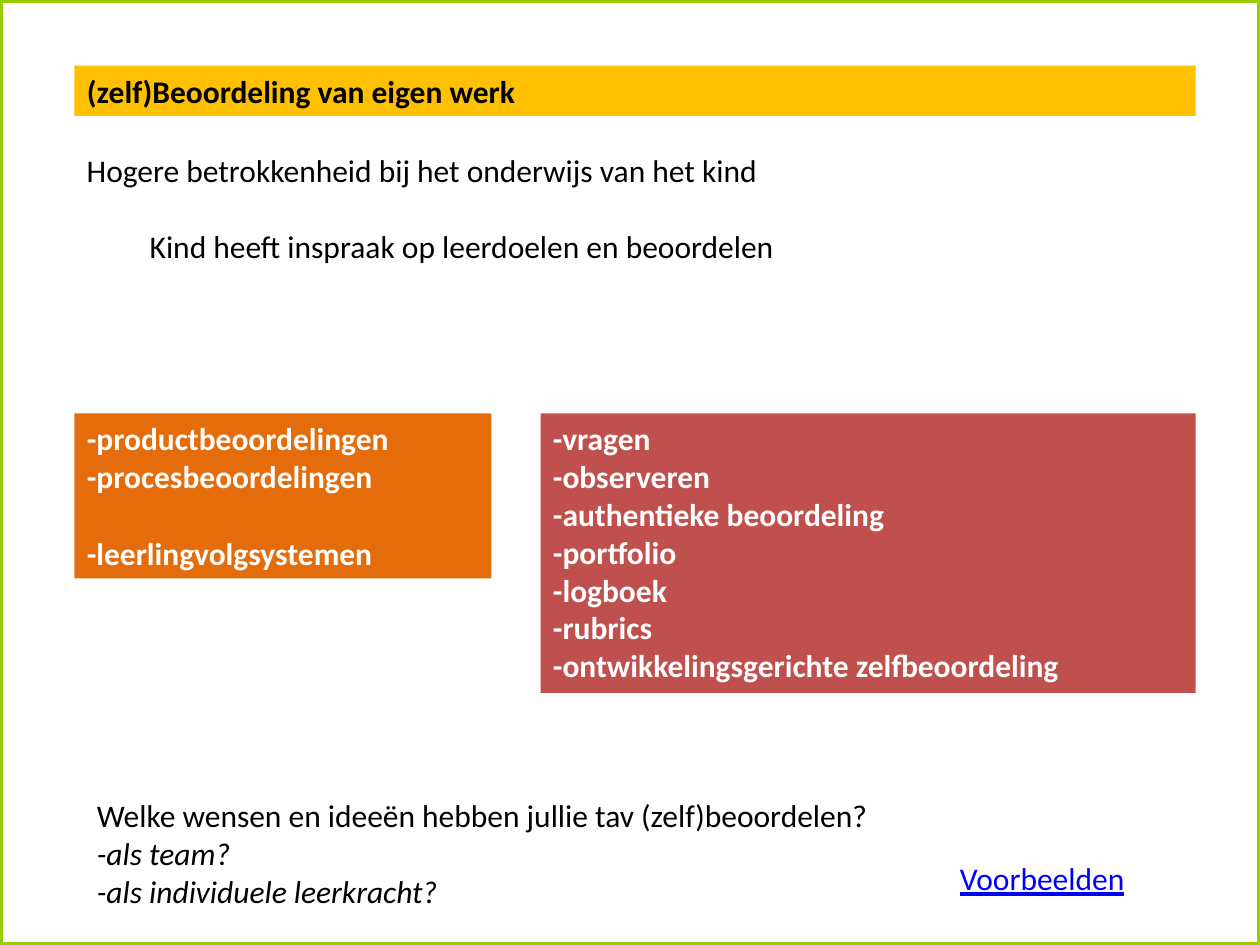
import pptx
import pptx.util
import pptx.dml.color
import pptx.enum.shapes
import pptx.enum.text
from dataclasses import dataclass

Inches = pptx.util.Inches
Pt = pptx.util.Pt


@dataclass(frozen=True)
class Theme:
    font: str = "Calibri"
    size: int = 18
    gap: int = 22  # one line of body text, in points
    black: str = "000000"
    white: str = "FFFFFF"
    green: str = "99CC00"
    gold: str = "FFC000"
    orange: str = "E46C0A"
    red: str = "C0504D"
    blue: str = "0000FF"


def color(code):
    return pptx.dml.color.RGBColor.from_string(code)


class Page:
    def __init__(self, deck, theme):
        self.theme = theme
        self.slide = deck.slides.add_slide(deck.slide_layouts[5])

    def label(self, shape, lines, ink, bold=False, gaps=()):
        """Fill a shape with lines; gaps lists the lines set one line lower."""
        frame = shape.text_frame
        frame.word_wrap = True
        frame.auto_size = pptx.enum.text.MSO_AUTO_SIZE.NONE
        frame.vertical_anchor = pptx.enum.text.MSO_ANCHOR.TOP
        frame.text = "\n".join(lines)
        for row, para in enumerate(frame.paragraphs):
            para.alignment = pptx.enum.text.PP_ALIGN.LEFT
            para.font.name = self.theme.font
            para.font.size = Pt(self.theme.size)
            para.font.bold = bold
            para.font.color.rgb = color(ink)
            if row in gaps:
                para.space_before = Pt(self.theme.gap)
        return frame.paragraphs

    def rect(self, x, y, w, h, fill):
        kind = pptx.enum.shapes.MSO_SHAPE.RECTANGLE
        shape = self.slide.shapes.add_shape(
            kind, Inches(x), Inches(y), Inches(w), Inches(h))
        shape.shadow.inherit = False
        shape.fill.solid()
        shape.fill.fore_color.rgb = color(fill)
        shape.line.fill.background()
        return shape

    def border(self, w, h):
        shape = self.rect(0, 0, w, h, self.theme.white)
        shape.line.color.rgb = color(self.theme.green)
        shape.line.width = Pt(3)
        # Keep the border behind the title
        self.slide.shapes.title.element.addprevious(shape.element)

    def title(self, x, y, w, h, text):
        shape = self.slide.shapes.title
        shape.left, shape.top = Inches(x), Inches(y)
        shape.width, shape.height = Inches(w), Inches(h)
        shape.fill.solid()
        shape.fill.fore_color.rgb = color(self.theme.gold)
        self.label(shape, [text], self.theme.black, bold=True)

    def panel(self, x, y, w, h, fill, lines, gaps=()):
        shape = self.rect(x, y, w, h, fill)
        self.label(shape, lines, self.theme.white, True, gaps)

    def text(self, x, y, w, h, lines, ink=None, gaps=()):
        box = self.slide.shapes.add_textbox(
            Inches(x), Inches(y), Inches(w), Inches(h))
        return self.label(box, lines, ink or self.theme.black, gaps=gaps)


def main():
    deck = pptx.Presentation()
    deck.slide_width, deck.slide_height = Inches(10), Inches(7.5)
    theme = Theme()
    page = Page(deck, theme)
    left, top = 0.59, 3.28

    # Border and heading
    page.border(10, 7.5)
    page.title(left, 0.52, 8.9, 0.4, "(zelf)Beoordeling van eigen werk")

    # Two panels with forms of assessment
    page.panel(left, top, 3.31, 1.31, theme.orange, [
        "-productbeoordelingen",
        "-procesbeoordelingen",
        "-leerlingvolgsystemen",
    ], gaps=[2])
    page.panel(4.29, top, 5.2, 2.22, theme.red, [
        "-vragen",
        "-observeren",
        "-authentieke beoordeling",
        "-portfolio",
        "-logboek",
        "-rubrics",
        "-ontwikkelingsgerichte zelfbeoordeling",
    ])

    # Introduction
    page.text(left, 1.15, 7.56, 1.62, [
        "Hogere betrokkenheid bij het onderwijs van het kind",
        "\tKind heeft inspraak op leerdoelen en beoordelen",
    ], gaps=[1])

    # Closing questions
    asks = page.text(0.67, 6.27, 8.82, 1.01, [
        "Welke wensen en ideeën hebben jullie tav (zelf)beoordelen?",
        "-als team?",
        "-als individuele leerkracht?",
    ])
    for para in asks[1:]:
        para.font.italic = True

    # Examples
    lines = page.text(7.52, 6.77, 1.97, 0.4, ["Voorbeelden"], theme.blue)
    lines[0].font.underline = True

    deck.save("out.pptx")


if __name__ == "__main__":
    main()
